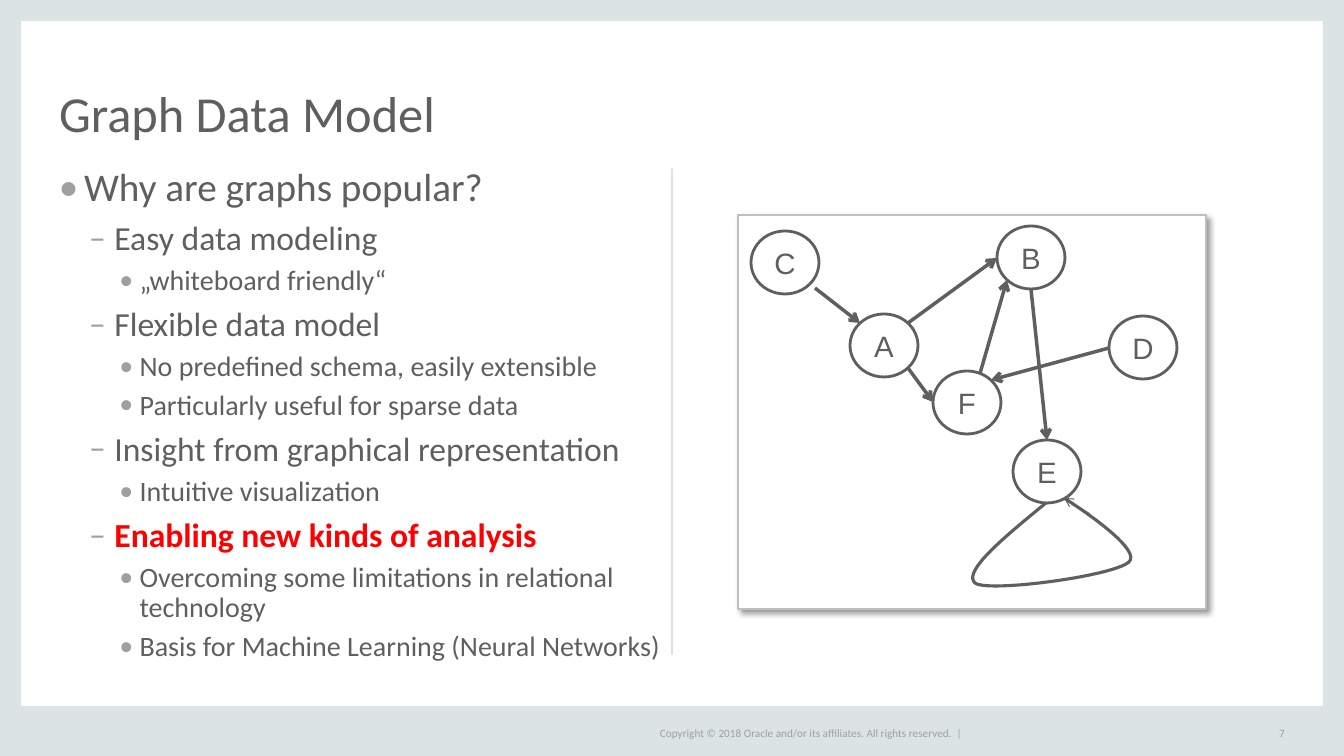
from math import cos, pi, sin

from lxml import etree
from pptx import Presentation
from pptx import util as u
from pptx.dml.color import RGBColor
from pptx.enum import shapes, text
from pptx.oxml.ns import qn

PX = 12192000 / 1344
COLORS = {
    "frame": "DCE3E4",
    "white": "FFFFFF",
    "ink": "5F5F5F",
    "muted": "9F9F9F",
    "panel": "BFBFBF",
    "accent": "FF0000",
    "shadow": "000000",
}
FRAME = [(0, 0, 21, 755), (1323, 1, 21, 755), (0, 706, 1344, 50), (0, 0, 1344, 21)]
LEVELS = [
    {"size": 28, "left": 0.25, "hang": 0.25, "before": 12, "bullet": "•"},
    {"size": 24, "left": 0.55, "hang": 0.25, "before": 8, "bullet": "–"},
    {"size": 20, "left": 0.8, "hang": 0.2, "before": 6, "bullet": "•"},
]
BULLETS = [
    (0, "Why are graphs popular?"),
    (1, "Easy data modeling"),
    (2, "„whiteboard friendly“"),
    (1, "Flexible data model"),
    (2, "No predefined schema, easily extensible"),
    (2, "Particularly useful for sparse data"),
    (1, "Insight from graphical representation"),
    (2, "Intuitive visualization"),
    (1, "Enabling new kinds of analysis"),
    (2, "Overcoming some limitations in relational technology"),
    (2, "Basis for Machine Learning (Neural Networks)"),
]
HIGHLIGHT = "Enabling new kinds of analysis"
NODE_W, NODE_H = 68, 63
NODES = {
    "E": (1013, 440),
    "A": (850, 314),
    "D": (1109, 316),
    "C": (751, 231),
    "B": (997, 226),
    "F": (933, 371),
}
COMPASS = ["E", "SE", "S", "SW", "W", "NW", "N", "NE"]
EDGES = [
    ("A", "NE", "B", "W", (0, 0)),
    ("A", "SE", "F", "W", (0, 0)),
    ("D", "W", "F", "NE", (0, 0)),
    ("B", "S", "E", "N", (0, 0)),
    ("C", "SE", "A", "NW", (6, 3)),
    ("F", "NE", "B", "SW", (-14, 4)),
]
LOOP_START = (1052, 498)
LOOP_CURVES = [
    ((1007, 535), (962, 571), (975, 583)),
    ((988, 593), (1114, 576), (1129, 562)),
    ((1144, 548), (1064, 498), (1064, 498)),
]
LOOP_STEPS = 20


def emu(*lengths):
    return [round(n * PX) for n in lengths]


def rgb(name):
    return RGBColor.from_string(COLORS[name])


def add_xml(parent, tag, **attrs):
    return etree.SubElement(parent, qn(tag), attrs)


def set_line(sp, color, width):
    sp.line.color.rgb = rgb(color)
    sp.line.width = u.Pt(width)


def add_box(s, kind, box, fill, line=None, width=1):
    sp = s.shapes.add_shape(kind, *emu(*box))
    sp.shadow.inherit = False
    sp.fill.solid()
    sp.fill.fore_color.rgb = rgb(fill)
    if line:
        set_line(sp, line, width)
    else:
        sp.line.fill.background()
    return sp


def add_shadow(sp):
    effects = sp._element.spPr.find(qn("a:effectLst"))
    shadow = add_xml(effects, "a:outerShdw", blurRad=str(u.Pt(4)), dist=str(u.Pt(3)),
                     dir="2700000", algn="tl", rotWithShape="0")
    color = add_xml(shadow, "a:srgbClr", val=COLORS["shadow"])
    add_xml(color, "a:alpha", val="40000")


def add_line(s, start, end, color, width, arrow=False):
    line = s.shapes.add_connector(shapes.MSO_CONNECTOR.STRAIGHT, *emu(*start, *end))
    set_line(line, color, width)
    if arrow:
        add_xml(line.line._get_or_add_ln(), "a:tailEnd", type="arrow")
    add_xml(line._element.spPr, "a:effectLst")
    return line


def prepare_frame(sp, anchor, wrap=True):
    tf = sp.text_frame
    tf.word_wrap = wrap
    tf.vertical_anchor = anchor
    tf.margin_left = tf.margin_top = tf.margin_right = tf.margin_bottom = 0
    return tf


def add_run(p, words, size, color, font="Calibri", bold=False):
    r = p.add_run()
    r.text = words
    r.font.name = font
    r.font.size = u.Pt(size)
    r.font.bold = bold
    r.font.color.rgb = rgb(color)


def add_label(s, box, words, size, color, anchor, align=text.PP_ALIGN.LEFT,
              wrap=True, spacing=1.0):
    tf = prepare_frame(s.shapes.add_textbox(*emu(*box)), anchor, wrap)
    p = tf.paragraphs[0]
    p.alignment = align
    p.line_spacing = spacing
    add_run(p, words, size, color)


def add_bullets(s, box):
    tf = prepare_frame(s.shapes.add_textbox(*emu(*box)), text.MSO_ANCHOR.TOP)
    for i, (depth, words) in enumerate(BULLETS):
        level = LEVELS[depth]
        p = tf.add_paragraph() if i else tf.paragraphs[0]
        pPr = p._p.get_or_add_pPr()
        pPr.set("marL", str(u.Inches(level["left"])))
        pPr.set("indent", str(-u.Inches(level["hang"])))
        add_xml(add_xml(pPr, "a:buClr"), "a:srgbClr", val=COLORS["muted"])
        add_xml(pPr, "a:buFont", typeface="Calibri")
        add_xml(pPr, "a:buChar", char=level["bullet"])
        p.level = depth
        p.line_spacing = 0.9
        if i:
            p.space_before = u.Pt(level["before"])
        hot = words == HIGHLIGHT
        add_run(p, words, level["size"], "accent" if hot else "ink", bold=hot)


def node_site(name, side):
    left, top = NODES[name]
    angle = COMPASS.index(side) * pi / 4
    return (round(left + NODE_W / 2 * (1 + cos(angle))),
            round(top + NODE_H / 2 * (1 + sin(angle))))


def add_edge(s, source, source_side, target, target_side, nudge):
    x, y = node_site(source, source_side)
    add_line(s, (x + nudge[0], y + nudge[1]), node_site(target, target_side),
             "ink", 2.5, arrow=True)


def add_node(s, name):
    sp = add_box(s, shapes.MSO_SHAPE.OVAL, (*NODES[name], NODE_W, NODE_H), "white", "ink", 2)
    p = prepare_frame(sp, text.MSO_ANCHOR.MIDDLE).paragraphs[0]
    p.alignment = text.PP_ALIGN.CENTER
    add_run(p, name, 21, "ink", "Arial")


def bezier(points, t):
    weights = ((1 - t) ** 3, 3 * t * (1 - t) ** 2, 3 * t * t * (1 - t), t ** 3)
    return [sum(w * pt[axis] for w, pt in zip(weights, points)) for axis in (0, 1)]


def add_loop(s):
    start, outline = LOOP_START, []
    for curve in LOOP_CURVES:
        points = (start, *curve)
        outline += [emu(*bezier(points, n / LOOP_STEPS)) for n in range(1, LOOP_STEPS + 1)]
        start = curve[-1]
    builder = s.shapes.build_freeform(*emu(*LOOP_START))
    builder.add_line_segments(outline, close=False)
    sp = builder.convert_to_shape()
    sp.shadow.inherit = False
    sp.fill.background()
    set_line(sp, "ink", 2.25)


def main():
    prs = Presentation()
    prs.slide_width, prs.slide_height = emu(1344, 756)
    s = prs.slides.add_slide(prs.slide_layouts[6])
    rect, middle = shapes.MSO_SHAPE.RECTANGLE, text.MSO_ANCHOR.MIDDLE
    for bar in FRAME:
        add_box(s, rect, bar, "frame")
    add_label(s, (660, 723, 307, 20),
              "Copyright © 2018 Oracle and/or its affiliates. All rights reserved.  |",
              8, "muted", middle, wrap=False)
    add_line(s, (672, 168), (672, 655), "frame", 1.5)
    add_bullets(s, (59, 168, 609, 487))
    add_label(s, (59, 44, 1226, 98), "Graph Data Model", 36, "ink",
              text.MSO_ANCHOR.BOTTOM, spacing=0.8)
    add_shadow(add_box(s, rect, (738, 215, 468, 394), "white", "panel", 1.5))
    for edge in EDGES:
        add_edge(s, *edge)
    add_loop(s)
    for name in NODES:
        add_node(s, name)
    add_line(s, (1090, 514), (1064, 498), "ink", 0.75, arrow=True)
    add_label(s, (1243, 723, 42, 20), "7", 8, "muted", middle,
              text.PP_ALIGN.RIGHT, wrap=False)
    prs.save("out.pptx")


if __name__ == "__main__":
    main()
